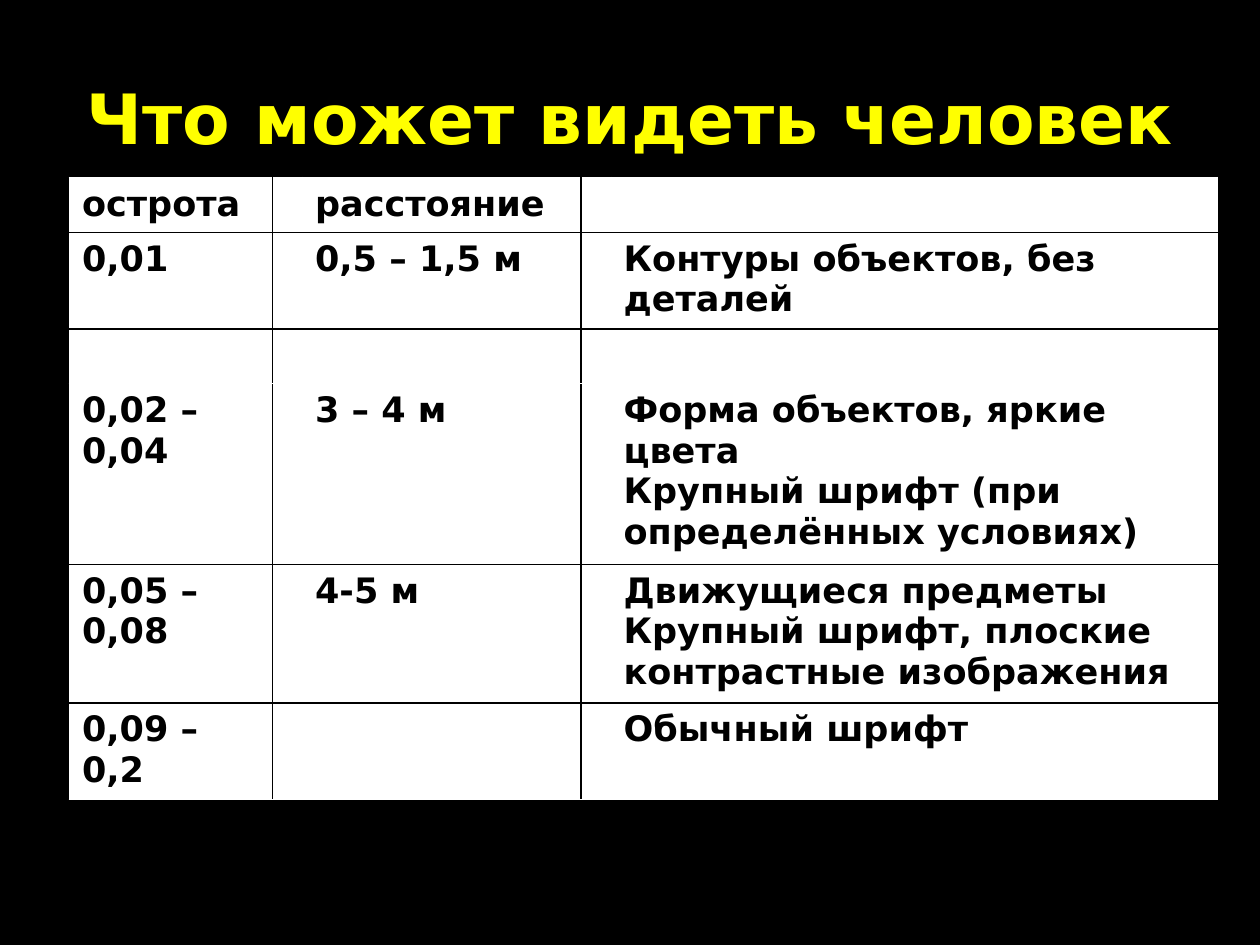
from lxml.etree import SubElement
from pptx import Presentation
from pptx.dml.color import RGBColor
from pptx.enum.text import MSO_ANCHOR, PP_ALIGN
from pptx.oxml.ns import qn
from pptx.util import Cm, Pt

BLACK = RGBColor(0, 0, 0)
WHITE = RGBColor(255, 255, 255)
YELLOW = RGBColor(255, 255, 0)
FONT = "DejaVu Sans"

TITLE = "Что может видеть человек"
COLUMN_WIDTHS = (4.09, 0.58, 5.61, 0.58, 12.22)
ROW_HEIGHTS = (1.09, 1.89, 1.09, 3.53, 2.72, 1.89)
TEXT_COLUMNS = (0, 2, 4)  # the narrow columns between them are gaps
ACUITY_ROWS = (
    ("острота", "расстояние", ""),
    ("0,01", "0,5 – 1,5 м", "Контуры объектов, без деталей"),
    ("", "", ""),
    ("0,02 – 0,04", "3 – 4 м",
     "Форма объектов, яркие цвета\nКрупный шрифт (при определённых условиях)"),
    ("0,05 – 0,08", "4-5 м",
     "Движущиеся предметы\nКрупный шрифт, плоские контрастные изображения"),
    ("0,09 – 0,2", "", "Обычный шрифт"),
)
RULED_ROWS = (0, 1, 3, 4)  # black line below
RULED_COLUMNS = (0, 2)  # black line to the right


def style_font(para, size, color):
    font = para.font
    font.name, font.size, font.bold = FONT, Pt(size), True
    font.color.rgb = color


def add_title(page, left, top, width, height):
    frame = page.shapes.add_textbox(left, top, width, height).text_frame
    frame.word_wrap = True
    frame.vertical_anchor = MSO_ANCHOR.MIDDLE
    para = frame.paragraphs[0]
    para.text = TITLE
    para.alignment = PP_ALIGN.CENTER
    style_font(para, 39.6, YELLOW)


def set_borders(cell, row, column):
    """Draw each side black where a ruled row or column meets it, else white."""
    sides = {
        "a:lnL": column - 1 in RULED_COLUMNS,
        "a:lnR": column in RULED_COLUMNS,
        "a:lnT": row - 1 in RULED_ROWS,
        "a:lnB": row in RULED_ROWS,
    }
    properties = cell._tc.get_or_add_tcPr()
    for tag, ruled in sides.items():
        line = SubElement(properties, qn(tag), w=str(Pt(1)))
        fill = SubElement(line, qn("a:solidFill"))
        SubElement(fill, qn("a:srgbClr"), val=str(BLACK if ruled else WHITE))


def add_acuity_table(page, left, top):
    width, height = Cm(sum(COLUMN_WIDTHS)), Cm(sum(ROW_HEIGHTS))
    table = page.shapes.add_table(
        len(ROW_HEIGHTS), len(COLUMN_WIDTHS), left, top, width, height).table
    table.first_row = table.horz_banding = False
    for column, size in zip(table.columns, COLUMN_WIDTHS):
        column.width = Cm(size)
    for row, size in zip(table.rows, ROW_HEIGHTS):
        row.height = Cm(size)

    for r, texts in enumerate(ACUITY_ROWS):
        for column, text in zip(TEXT_COLUMNS, texts):
            table.cell(r, column).text = text
        for c in range(len(COLUMN_WIDTHS)):
            cell = table.cell(r, c)
            set_borders(cell, r, c)
            cell.fill.solid()
            cell.fill.fore_color.rgb = WHITE
            for para in cell.text_frame.paragraphs:
                style_font(para, 20, BLACK)


def main():
    deck = Presentation()
    deck.slide_width, deck.slide_height = Cm(25.4), Cm(19.05)
    page = deck.slides.add_slide(deck.slide_layouts[6])
    page.background.fill.solid()
    page.background.fill.fore_color.rgb = BLACK
    add_title(page, Cm(1.27), Cm(0.76), Cm(22.86), Cm(3.18))
    add_acuity_table(page, Cm(1.4), Cm(3.58))
    deck.save("out.pptx")


if __name__ == "__main__":
    main()
